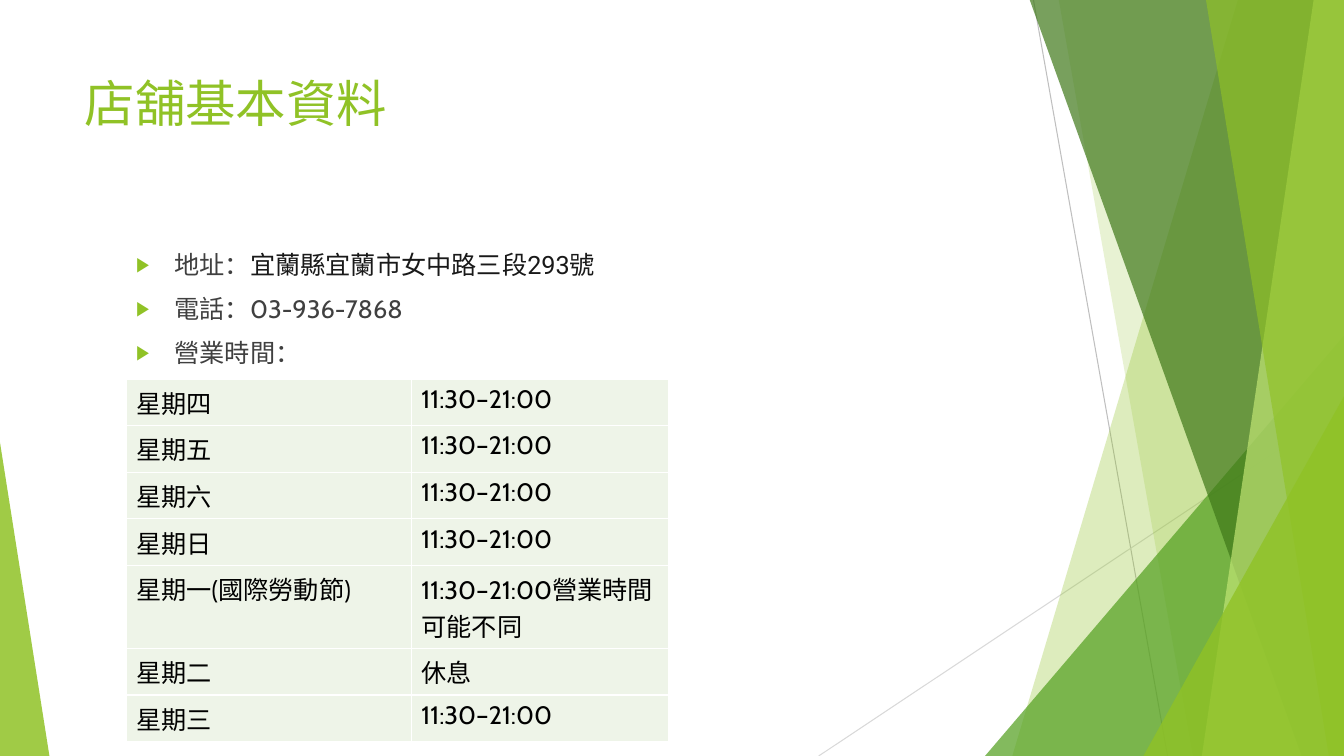
from lxml.etree import SubElement
from pptx import Presentation
from pptx.dml.color import RGBColor
from pptx.enum.shapes import MSO_CONNECTOR, MSO_SHAPE
from pptx.enum.text import MSO_ANCHOR, PP_ALIGN
from pptx.oxml.ns import qn
from pptx.util import Inches, Pt

LIME = RGBColor(0x90, 0xC2, 0x26)
GREEN = RGBColor(0x54, 0xA0, 0x21)
DARK_GREEN = RGBColor(0x3F, 0x78, 0x19)
PALE_LIME = RGBColor(0xC0, 0xE4, 0x74)
CELL = RGBColor(0xEE, 0xF4, 0xE8)
GRAY = RGBColor(0x40, 0x40, 0x40)
INK = RGBColor(0x19, 0x19, 0x19)
BLACK = RGBColor(0, 0, 0)
RIGHT, TOP, BOTTOM = 13.33, -0.01, 7.5


def paint(sp, color, alpha):
    sp.shadow.inherit = False
    sp.fill.solid()
    sp.fill.fore_color.rgb = color
    clr = sp.fill._xPr.find(qn("a:solidFill"))[0]
    SubElement(clr, qn("a:alpha"), val=str(alpha * 1000))
    sp.line.fill.background()


def add_run(p, text, size, color, name="Cabin"):
    r = p.add_run()
    r.text = text
    for key, value in {"size": Pt(size), "name": name}.items():
        setattr(r.font, key, value)
    r.font.color.rgb = color


prs = Presentation()
prs.slide_width, prs.slide_height = Inches(RIGHT), Inches(BOTTOM)
slide = prs.slides.add_slide(prs.slide_layouts[1])
shapes = slide.shapes

# Thin background lines
for x1, y1, x2, y2, color in [
    (10.25, 0, 11.58, BOTTOM, RGBColor(0xBF, 0xBF, 0xBF)),
    (RIGHT, 4.03, 8.12, BOTTOM, RGBColor(0xD9, 0xD9, 0xD9)),
]:
    line = shapes.add_connector(MSO_CONNECTOR.STRAIGHT, Inches(x1), Inches(y1), Inches(x2), Inches(y2))
    line.line.color.rgb = color
    line.line.width = Pt(0.75)
    SubElement(line._element.spPr, qn("a:effectLst"))

# Translucent facets: bands run to the right edge, triangles stand on the bottom
for kind, geometry, color, alpha in [
    ("band", (12.28, 10.04), LIME, 30),
    ("band", (10.5, 11.83), LIME, 20),
    ("triangle", (9.77, 3.33, 3.56, 1), GREEN, 72),
    ("band", (10.21, 12.91), DARK_GREEN, 70),
    ("band", (13.03, 11.92), PALE_LIME, 70),
    ("band", (11.96, 13.18), LIME, 65),
    ("triangle", (11.34, 3.93, 1.99, 1), LIME, 80),
    ("triangle", (0, 4.39, 0.49, 0), LIME, 85),
]:
    if kind == "band":
        top_x, bottom_x = geometry
        fb = shapes.build_freeform(Inches(top_x), Inches(TOP))
        corners = [(RIGHT, TOP), (RIGHT, BOTTOM), (bottom_x, BOTTOM)]
        fb.add_line_segments([(Inches(x), Inches(y)) for x, y in corners], close=True)
        sp = fb.convert_to_shape()
    else:
        x, y, width, apex = geometry
        sp = shapes.add_shape(MSO_SHAPE.ISOSCELES_TRIANGLE, Inches(x), Inches(y),
                              Inches(width), Inches(BOTTOM - y))
        sp.adjustments[0] = apex
    paint(sp, color, alpha)

# Title and body, brought in front of the facets
title, body = shapes.title, slide.placeholders[1]
for sp, box in [(title, (0.74, 0.67, 9.4, 1.44)), (body, (1.25, 2.42, 9.73, 4.24))]:
    sp.left, sp.top, sp.width, sp.height = [Inches(v) for v in box]
    sp.text_frame.vertical_anchor = MSO_ANCHOR.TOP
    shapes._spTree.append(sp._element)

p = title.text_frame.paragraphs[0]
p.alignment = PP_ALIGN.LEFT
add_run(p, "店舖基本資料", 36, LIME)

# Shop details
tf = body.text_frame
for i, runs in enumerate([
    [("地址：", GRAY, "Cabin"), ("宜蘭縣宜蘭市女中路三段293號", INK, "Roboto")],
    [("電話：03-936-7868", GRAY, "Cabin")],
    [("營業時間：", GRAY, "Cabin")],
]):
    p = tf.add_paragraph() if i else tf.paragraphs[0]
    pPr = p._p.get_or_add_pPr()
    pPr.set("marL", str(Inches(0.38)))
    pPr.set("indent", str(Inches(-0.38)))
    SubElement(SubElement(pPr, qn("a:buClr")), qn("a:srgbClr"), val=str(LIME))
    SubElement(pPr, qn("a:buSzPct"), val="80000")
    SubElement(pPr, qn("a:buChar"), char="▶")
    p.space_before = Pt(10 if i else 0)
    for text, color, name in runs:
        add_run(p, text, 18, color, name)

# Opening hours
HOURS = "11:30–21:00"
hours = [
    ("星期四", HOURS),
    ("星期五", HOURS),
    ("星期六", HOURS),
    ("星期日", HOURS),
    ("星期一(國際勞動節)", HOURS + "營業時間可能不同"),
    ("星期二", "休息"),
    ("星期三", HOURS),
]
table = shapes.add_table(len(hours), 2, Inches(1.25), Inches(3.76), Inches(5.38), Inches(3.1)).table
table.first_row = table.horz_banding = False
for column, width in zip(table.columns, (2.83, 2.55)):
    column.width = Inches(width)
for row, texts in zip(table.rows, hours):
    row.height = Inches(0.82 if len(texts[1]) > len(HOURS) else 0.46)
    for j, (cell, text) in enumerate(zip(row.cells, texts)):
        if j == 0:
            cell.margin_right = Inches(0.12)
        tcPr = cell._tc.get_or_add_tcPr()
        for side in ("lnL", "lnR", "lnT", "lnB"):
            ln = SubElement(tcPr, qn("a:" + side), w=str(Pt(1)))
            SubElement(SubElement(ln, qn("a:solidFill")), qn("a:srgbClr"), val="FFFFFF")
        cell.fill.solid()
        cell.fill.fore_color.rgb = CELL
        add_run(cell.text_frame.paragraphs[0], text, 18, BLACK)

prs.save("out.pptx")
